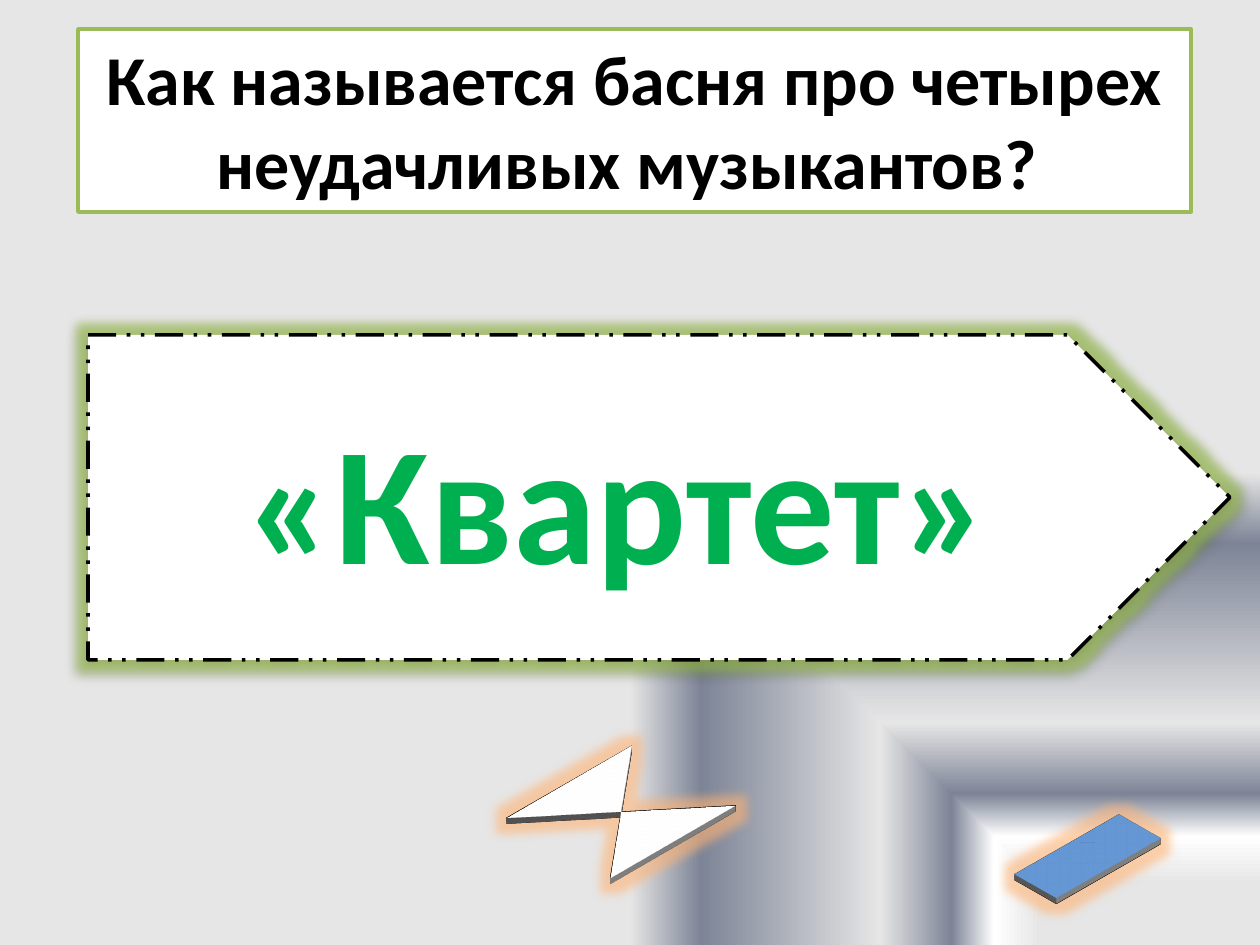
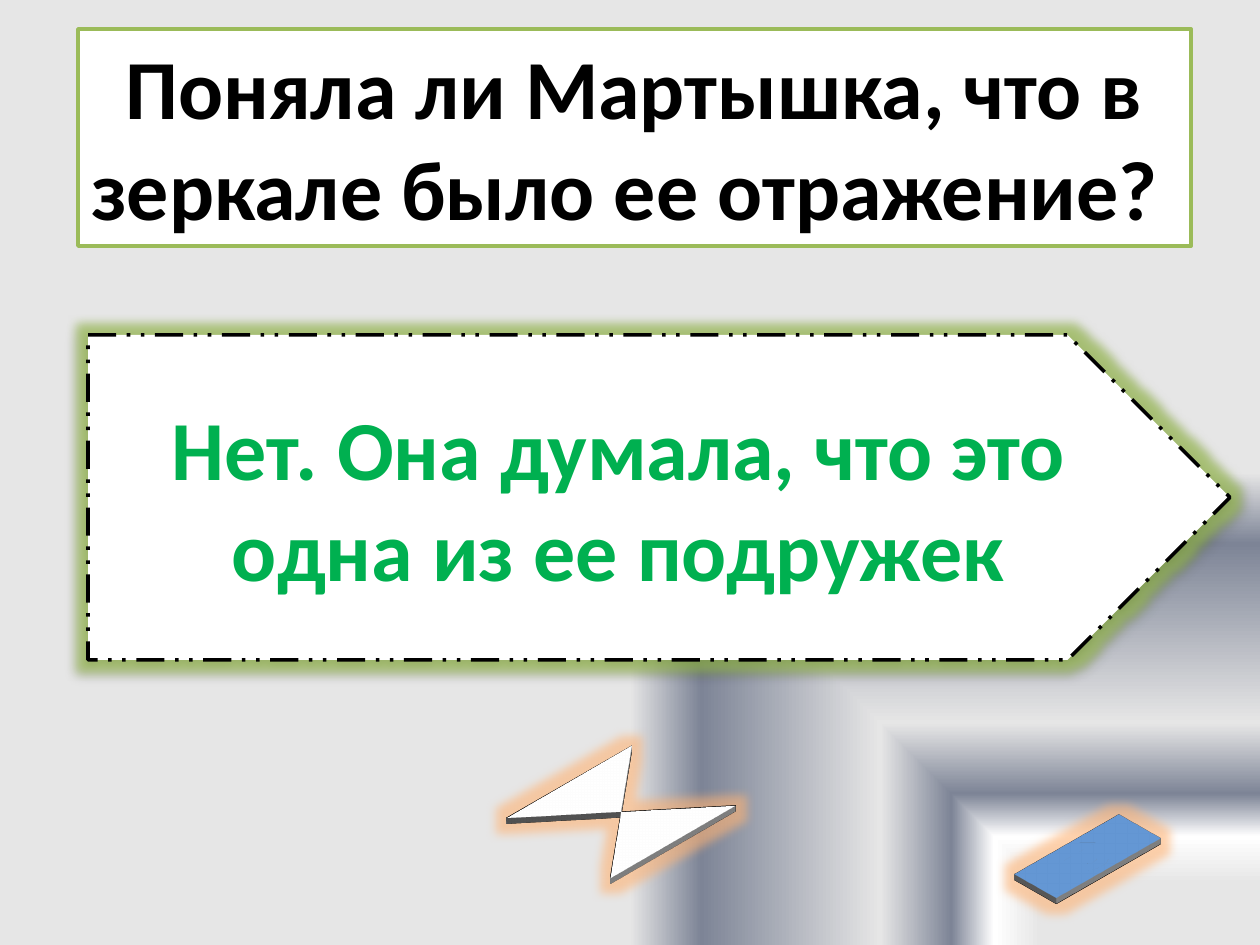
from pptx import Presentation
from pptx.dml.color import RGBColor
from pptx.enum.dml import MSO_LINE
from pptx.enum.shapes import MSO_SHAPE as SHAPE
from pptx.enum.text import MSO_ANCHOR as ANCHOR, MSO_AUTO_SIZE as AUTO, PP_ALIGN as ALIGN
from pptx.oxml import parse_xml
from pptx.oxml.ns import nsdecls
from pptx.util import Pt

# Content
QUIZ = [
    {"question": "Как называется басня про четырех неудачливых музыкантов? ",
     "question_size": 40, "question_height": 183,
     "answer": "«Квартет»", "answer_size": 96},
    {"question": "Поняла ли Мартышка, что в зеркале было ее отражение? ",
     "question_size": 48, "question_height": 217,
     "answer": "Нет. Она думала, что это одна из ее подружек", "answer_size": 48},
]

# Shared style
COLORS = {"white": "FFFFFF", "black": "000000", "frame": "9BBB59", "answer": "00B050",
          "button": "4F81BD", "green_glow": "9BC348", "orange_glow": "FFB476"}
BACKGROUND = [(13, "E6E6E6", 100), (23, "FFFFFF", 53), (32, "7D8496", 100),
              (47, "E6E6E6", 100), (85, "7D8496", 100), (100, "E6E6E6", 100)]
FONT = "Calibri"
PX = 914400 / 126

# Places in px: left, top, width, height
QUESTION_LEFT, QUESTION_TOP, QUESTION_WIDTH = 78, 29, 1113
HOURGLASS = (532, 738, 178, 147)
ANSWER = (88, 335, 1142, 325)
BUTTON = (1014, 827, 147, 59)


def emu(*lengths):
    return [round(n * PX) for n in lengths]


def rgb(name):
    return RGBColor.from_string(COLORS[name])


def color_xml(color, alpha):
    return f'<a:srgbClr val="{color}"><a:alpha val="{alpha * 1000}"/></a:srgbClr>'


def paint_background(s):
    s.background.fill.solid()
    bg = s.element.xpath("//p:bgPr")[0]
    stops = "".join(f'<a:gs pos="{pos * 1000}">{color_xml(color, alpha)}</a:gs>'
                    for pos, color, alpha in BACKGROUND)
    bg.replace(bg[0], parse_xml(
        f'<a:gradFill {nsdecls("a")} rotWithShape="1"><a:gsLst>{stops}</a:gsLst>'
        '<a:path path="rect"><a:fillToRect l="100000" t="100000"/></a:path>'
        '<a:tileRect r="-100000" b="-100000"/></a:gradFill>'))


def paint(sp, fill, line, width):
    sp.fill.solid()
    sp.fill.fore_color.rgb = rgb(fill)
    sp.line.color.rgb = rgb(line)
    sp.line.width = Pt(width)


def add_glow(sp, glow, alpha, blur, dist, angle):
    sp.shadow.inherit = False
    effects = sp.element.spPr.find(".//{*}effectLst")
    effects.append(parse_xml(
        f'<a:glow {nsdecls("a")} rad="{Pt(11)}">{color_xml(COLORS[glow], 60)}</a:glow>'))
    effects.append(parse_xml(
        f'<a:outerShdw {nsdecls("a")} blurRad="{Pt(blur)}" dist="{Pt(dist)}" '
        f'dir="{angle * 60000}" rotWithShape="0">{color_xml(COLORS["black"], alpha)}</a:outerShdw>'))


def add_slab(s, kind, place, fill):
    """Thin isometric plate with an orange glow."""
    sp = s.shapes.add_shape(kind, *emu(*place))
    paint(sp, fill, "white", 2.75)
    add_glow(sp, "orange_glow", 43, 25, 0, 45)
    sp.element.spPr.append(parse_xml(
        f'<a:scene3d {nsdecls("a")}><a:camera prst="isometricTopUp"/>'
        '<a:lightRig rig="threePt" dir="t"/></a:scene3d>'))
    sp.element.spPr.append(parse_xml(
        f'<a:sp3d {nsdecls("a")} extrusionH="{Pt(4)}"/>'))


def write(sp, text, size, color, anchor):
    tf = sp.text_frame
    tf.word_wrap = True
    tf.vertical_anchor = anchor
    p = tf.paragraphs[0]
    p.alignment = ALIGN.CENTER
    r = p.add_run()
    r.text = text
    r.font.name, r.font.size, r.font.bold = FONT, Pt(size), True
    r.font.color.rgb = rgb(color)


def build_slide(prs, item):
    s = prs.slides.add_slide(prs.slide_layouts[5])
    paint_background(s)

    # Question
    title = s.shapes.title
    title.left, title.top, title.width, title.height = emu(
        QUESTION_LEFT, QUESTION_TOP, QUESTION_WIDTH, item["question_height"])
    paint(title, "white", "frame", 2)
    write(title, item["question"], item["question_size"], "black", ANCHOR.TOP)
    title.text_frame.auto_size = AUTO.SHAPE_TO_FIT_TEXT

    # Hourglass, answer arrow, return button
    add_slab(s, SHAPE.FLOWCHART_COLLATE, HOURGLASS, "white")
    arrow = s.shapes.add_shape(SHAPE.PENTAGON, *emu(*ANSWER))
    paint(arrow, "white", "black", 2)
    arrow.line.dash_style = MSO_LINE.DASH_DOT_DOT
    add_glow(arrow, "green_glow", 32, 3.5, 2.2, 90)
    write(arrow, item["answer"], item["answer_size"], "answer", ANCHOR.MIDDLE)
    add_slab(s, SHAPE.ACTION_BUTTON_RETURN, BUTTON, "button")


def main():
    prs = Presentation()
    prs.slide_width, prs.slide_height = emu(1260, 945)
    for item in QUIZ:
        build_slide(prs, item)
    prs.save("out.pptx")


if __name__ == "__main__":
    main()
